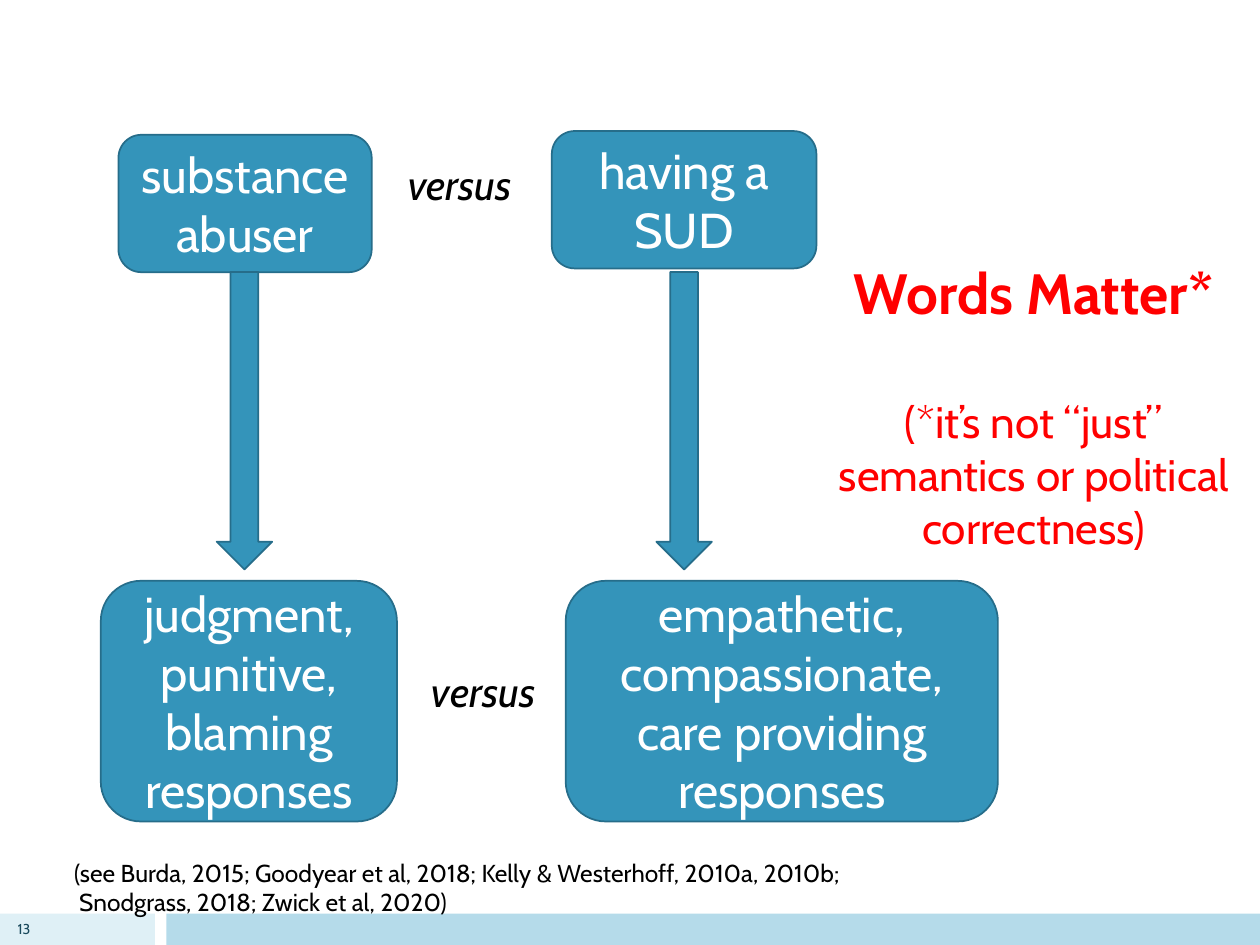
import pptx
import pptx.util
import pptx.dml.color
import pptx.enum.shapes
import pptx.enum.text

Inches = pptx.util.Inches
Pt = pptx.util.Pt
RGBColor = pptx.dml.color.RGBColor
SHAPE = pptx.enum.shapes.MSO_SHAPE
ALIGN = pptx.enum.text.PP_ALIGN
ANCHOR = pptx.enum.text.MSO_ANCHOR

FONT = "Cabin"
BLUE = RGBColor(0x34, 0x94, 0xBA)
OUTLINE = RGBColor(0x26, 0x6D, 0x8A)
PALE = RGBColor(0xDF, 0xF0, 0xF6)
LIGHT = RGBColor(0xB5, 0xDB, 0xEA)
NAVY = RGBColor(0x1A, 0x4A, 0x5D)
RED = RGBColor(0xFF, 0, 0)
BLACK = RGBColor(0, 0, 0)
WHITE = RGBColor(0xFF, 0xFF, 0xFF)

FOOTER_TOP, FOOTER_HEIGHT = 7.25, 0.25
TERM_HEIGHT = 1.09
RESPONSE_TOP, RESPONSE_HEIGHT = 4.61, 1.91
ARROW_TOP, ARROW_WIDTH, ARROW_HEIGHT = 2.16, 0.44, 2.36

footer_bars = [(0, 1.23, PALE), (1.32, 8.68, LIGHT)]
terms = [("substance abuser", 0.94, 1.07, 2.01), ("having a SUD", 4.38, 1.04, 2.1)]
responses = [
    ("judgment, punitive, blaming responses", 0.8, 2.35),
    ("empathetic, compassionate, care providing responses", 4.49, 3.43),
]
arrow_lefts = [1.72, 5.21]
versus_spots = [(3.14, 1.21), (3.33, 5.23)]
headline = "Words Matter*"
subhead = "(*it’s not “just” semantics or political correctness)"
citations = [
    "(see Burda, 2015; Goodyear et al, 2018; Kelly & Westerhoff, 2010a, 2010b;",
    "Snodgrass, 2018; Zwick et al, 2020)",
]


def write(frame, lines, size, color, align=ALIGN.LEFT, anchor=ANCHOR.TOP, wrap=True):
    frame.word_wrap = wrap
    frame.vertical_anchor = anchor
    frame.text = "\n".join(lines)
    for paragraph in frame.paragraphs:
        paragraph.alignment = align
        font = paragraph.font
        font.name, font.size, font.color.rgb = FONT, Pt(size), color
    return frame.paragraphs


def add_text(slide, box, lines, size, color, **layout):
    frame = slide.shapes.add_textbox(*map(Inches, box)).text_frame
    return write(frame, lines, size, color, **layout)


def add_block(slide, kind, box, fill, outline=None):
    block = slide.shapes.add_shape(kind, *map(Inches, box))
    block.shadow.inherit = False
    block.fill.solid()
    block.fill.fore_color.rgb = fill
    if outline is None:
        block.line.fill.background()
    else:
        block.line.color.rgb = outline
        block.line.width = Pt(1)
    return block


def main():
    deck = pptx.Presentation()
    deck.slide_width, deck.slide_height = Inches(10), Inches(7.5)
    slide = deck.slides.add_slide(deck.slide_layouts[6])

    for left, width, color in footer_bars:
        add_block(slide, SHAPE.RECTANGLE, (left, FOOTER_TOP, width, FOOTER_HEIGHT), color)

    title, note = add_text(slide, (6.49, 1.96, 3.43, 2.48), [headline, subhead], 32.4, RED,
                           align=ALIGN.CENTER, anchor=ANCHOR.BOTTOM)
    title.font.bold = True
    note.font.size = Pt(25.2)
    note.space_before = Pt(39)

    add_text(slide, (0, FOOTER_TOP, 0.34, FOOTER_HEIGHT), ["13"], 8.2, NAVY,
             align=ALIGN.RIGHT, anchor=ANCHOR.MIDDLE)
    citation_lines = add_text(slide, (0.49, 6.76, 7.54, 0.57), citations, 14, BLACK)
    citation_lines[1]._p.get_or_add_pPr().set("marL", str(Inches(0.04)))

    boxes = [(text, (left, top, width, TERM_HEIGHT)) for text, left, top, width in terms]
    boxes += [(text, (left, RESPONSE_TOP, width, RESPONSE_HEIGHT))
              for text, left, width in responses]
    for text, box in boxes:
        block = add_block(slide, SHAPE.ROUNDED_RECTANGLE, box, BLUE, OUTLINE)
        write(block.text_frame, [text], 28, WHITE, align=ALIGN.CENTER, anchor=ANCHOR.MIDDLE)

    for left in arrow_lefts:
        add_block(slide, SHAPE.DOWN_ARROW, (left, ARROW_TOP, ARROW_WIDTH, ARROW_HEIGHT),
                  BLUE, OUTLINE)

    for left, top in versus_spots:
        versus = add_text(slide, (left, top, 1.06, 0.5), ["versus"], 24, BLACK, wrap=False)
        versus[0].font.italic = True

    deck.save("out.pptx")


if __name__ == "__main__":
    main()
